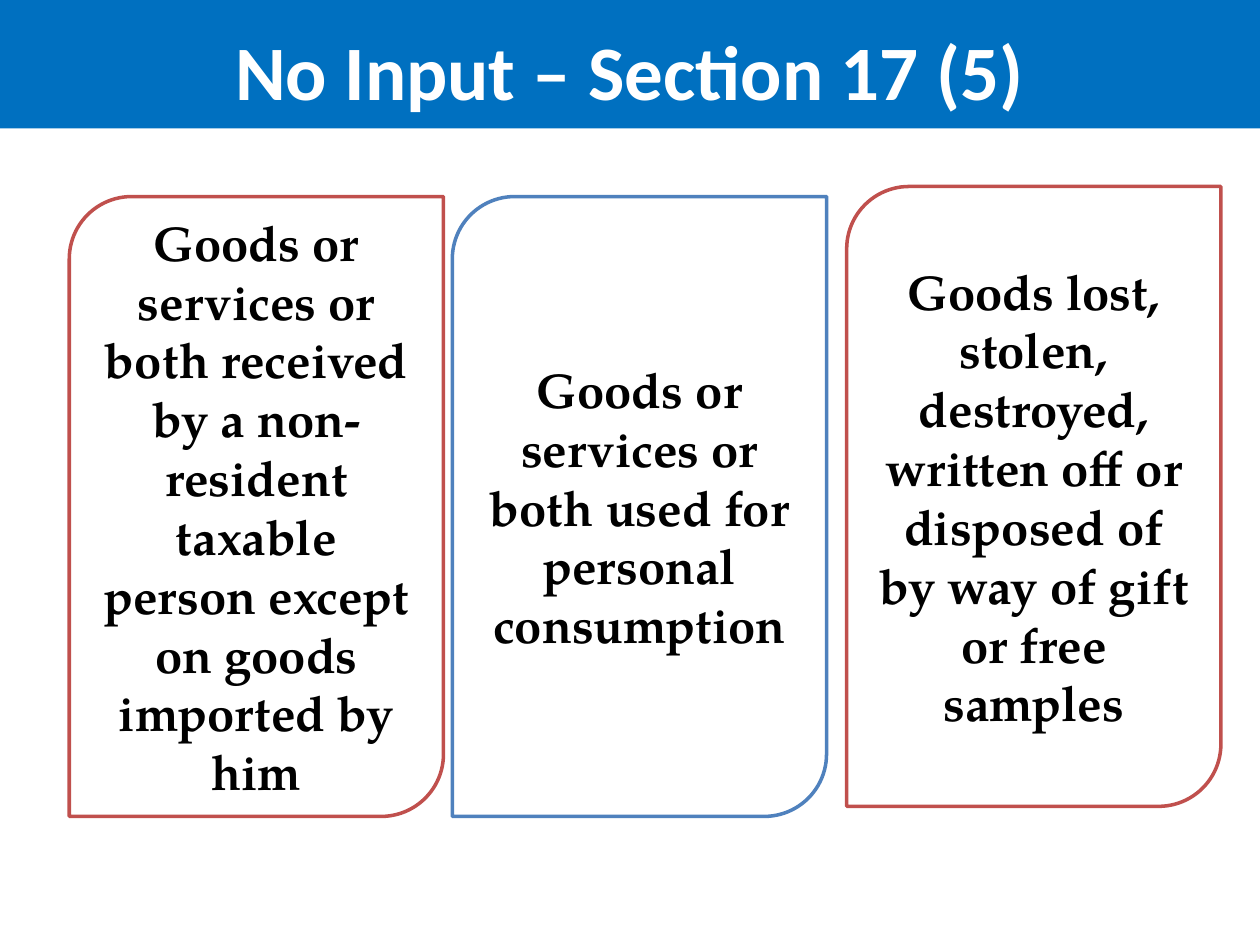
from dataclasses import dataclass

from pptx import Presentation
from pptx.dml.color import RGBColor
from pptx.enum.shapes import MSO_SHAPE as Shape
from pptx.enum.text import MSO_ANCHOR as Anchor, MSO_AUTO_SIZE as AutoSize, PP_ALIGN as Align
from pptx.slide import Slide
from pptx.util import Inches, Pt

COLORS = {
    "banner": "0070C0",
    "white": "FFFFFF",
    "black": "000000",
    "red": "C0504D",
    "blue": "4F81BD",
}
CARD_WIDTH, CARD_HEIGHT = 2.97, 4.92


@dataclass
class Card:
    left: float
    top: float
    outline: str
    text: str


CARDS = [
    Card(0.55, 1.56, "red",
         "Goods or services or both received by a non-resident taxable "
         "person except on goods imported by him"),
    Card(3.59, 1.56, "blue",
         "Goods or services or both used for personal consumption"),
    Card(6.72, 1.48, "red",
         "Goods lost, stolen, destroyed, written off or disposed of "
         "by way of gift or free samples"),
]


def color(name: str) -> RGBColor:
    return RGBColor.from_string(COLORS[name])


def write_text(box, text: str, font: str, size: int, ink: str, anchor: Anchor) -> None:
    frame = box.text_frame
    frame.text = text
    frame.word_wrap = True
    frame.auto_size = AutoSize.NONE
    frame.vertical_anchor = anchor
    para = frame.paragraphs[0]
    para.alignment = Align.CENTER
    span = para.runs[0]
    span.font.name = font
    span.font.size = Pt(size)
    span.font.bold = True
    span.font.color.rgb = color(ink)


def fill_box(box, name: str) -> None:
    box.fill.solid()
    box.fill.fore_color.rgb = color(name)


def draw_title(page: Slide, text: str) -> None:
    title = page.shapes.title
    title.left, title.top = Inches(0), Inches(0)
    title.width, title.height = Inches(10), Inches(1.02)
    fill_box(title, "banner")
    write_text(title, text, "Calibri", 44, "white", Anchor.BOTTOM)
    frame = title.text_frame
    frame.margin_left = frame.margin_right = Inches(0.1)
    frame.margin_top = frame.margin_bottom = Inches(0.1)


def draw_card(page: Slide, card: Card) -> None:
    box = page.shapes.add_shape(
        Shape.ROUND_2_DIAG_RECTANGLE, Inches(card.left), Inches(card.top),
        Inches(CARD_WIDTH), Inches(CARD_HEIGHT))
    box.shadow.inherit = False
    fill_box(box, "white")
    box.line.color.rgb = color(card.outline)
    box.line.width = Pt(2)
    write_text(box, card.text, "TeX Gyre Pagella", 28, "black", Anchor.MIDDLE)


def main() -> None:
    deck = Presentation()
    deck.slide_width, deck.slide_height = Inches(10), Inches(7.5)
    page = deck.slides.add_slide(deck.slide_layouts.get_by_name("Title Only"))
    draw_title(page, "No Input – Section 17 (5)")
    for card in CARDS:
        draw_card(page, card)
    deck.save("out.pptx")


if __name__ == "__main__":
    main()
